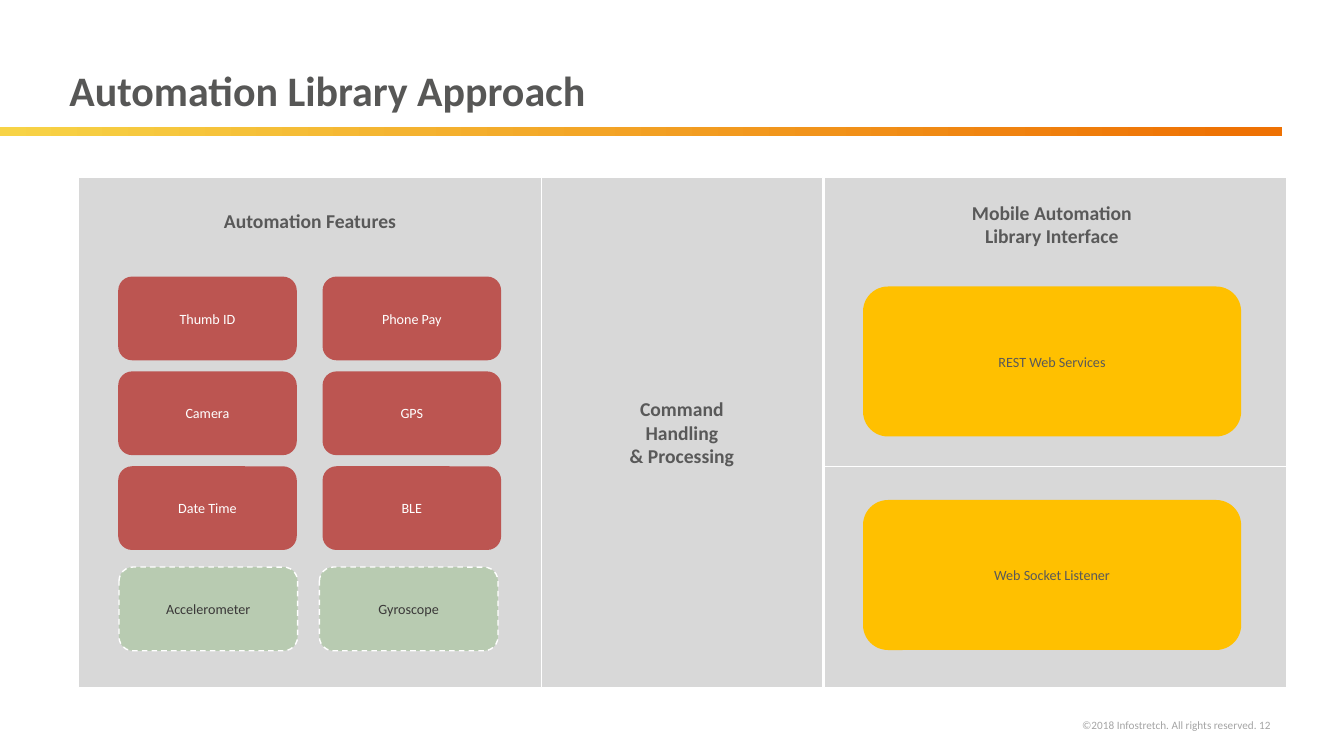
import pptx
import pptx.dml.color
import pptx.enum.dml
import pptx.enum.shapes
import pptx.enum.text
import pptx.oxml
import pptx.util

Cm = pptx.util.Cm
Pt = pptx.util.Pt
RGBColor = pptx.dml.color.RGBColor
Align = pptx.enum.text.PP_ALIGN
Anchor = pptx.enum.text.MSO_ANCHOR
Shape = pptx.enum.shapes.MSO_SHAPE

WHITE = RGBColor(0xFF, 0xFF, 0xFF)
TITLE_GREY = RGBColor(0x57, 0x57, 0x56)
TEXT_GREY = RGBColor(0x59, 0x59, 0x59)
FOOTER_GREY = RGBColor(0xA5, 0xA5, 0xA5)
DARK = RGBColor(0x3A, 0x38, 0x38)
PANEL_GREY = RGBColor(0xD8, 0xD8, 0xD8)
RED = RGBColor(0xBC, 0x55, 0x51)
GREEN = RGBColor(0xB8, 0xCB, 0xB1)
AMBER = RGBColor(0xFF, 0xC0, 0x00)
BAR_START = RGBColor(0xF7, 0xD3, 0x46)
BAR_END = RGBColor(0xEE, 0x71, 0x03)

PANEL_TOP, PANEL_HEIGHT = 4.47, 12.85
FEATURE_TOP, FEATURE_PITCH = 6.97, 2.39
FEATURE_SIZE = (4.5, 2.11)
INTERFACE_SIZE = (9.53, 3.78)


class Painter:
    """Draws elements on one page; lengths are in centimetres."""

    font_name = "Calibri"

    def __init__(self, page):
        self.shapes = page.shapes

    def set_text(self, box, text, size, color, bold=False, align=Align.CENTER,
                 anchor=Anchor.MIDDLE):
        frame = box.text_frame
        frame.word_wrap = True
        frame.vertical_anchor = anchor
        para = frame.paragraphs[0]
        para.text = text
        para.alignment = align
        font = para.font
        font.name, font.size, font.bold = self.font_name, Pt(size), bold
        font.color.rgb = color
        return para

    def label(self, left, top, width, height, text, size, color, bold=True,
              align=Align.CENTER, anchor=Anchor.TOP):
        box = self.shapes.add_textbox(Cm(left), Cm(top), Cm(width), Cm(height))
        return self.set_text(box, text, size, color, bold, align, anchor)

    def block(self, kind, left, top, width, height, fill):
        """Add a flat preset shape without outline."""
        shape = self.shapes.add_shape(kind, Cm(left), Cm(top), Cm(width), Cm(height))
        shape.shadow.inherit = False
        shape.fill.solid()
        shape.fill.fore_color.rgb = fill
        shape.line.fill.background()
        return shape

    def outline(self, shape, width=1):
        shape.line.color.rgb = WHITE
        shape.line.width = Pt(width)

    def panel(self, left, width):
        shape = self.block(Shape.RECTANGLE, left, PANEL_TOP, width, PANEL_HEIGHT, PANEL_GREY)
        self.outline(shape)
        return shape

    def card(self, left, top, size, text, fill, color, dashed=False):
        shape = self.block(Shape.ROUNDED_RECTANGLE, left, top, *size, fill)
        if dashed:
            self.outline(shape)
            shape.line.dash_style = pptx.enum.dml.MSO_LINE.DASH
        self.set_text(shape, text, 10.1, color)

    def gradient_bar(self, left, top, width, height):
        bar = self.block(Shape.RECTANGLE, left, top, width, height, BAR_END)
        bar.fill.gradient()
        bar.fill.gradient_angle = 0
        for stop, position, color in zip(bar.fill.gradient_stops, (0, 0.98),
                                         (BAR_START, BAR_END)):
            stop.position = position
            stop.color.rgb = color

    def divider(self, left, right, height):
        line = self.shapes.add_connector(pptx.enum.shapes.MSO_CONNECTOR.STRAIGHT,
                                         Cm(left), Cm(height), Cm(right), Cm(height))
        self.outline(line, 0.75)
        line._element.spPr.append(pptx.oxml.parse_xml(
            '<a:effectLst xmlns:a="http://schemas.openxmlformats.org/drawingml/2006/main"/>'))


def main():
    deck = pptx.Presentation()
    deck.slide_width, deck.slide_height = Cm(33.87), Cm(19.05)
    painter = Painter(deck.slides.add_slide(deck.slide_layouts[6]))

    painter.label(19.81, 17.98, 12.47, 0.61,
                  "©2018 Infostretch. All rights reserved. 12",
                  8, FOOTER_GREY, bold=False, align=Align.RIGHT)
    painter.gradient_bar(0, 3.19, 32.3, 0.24)
    title = painter.label(1.5, 0.51, 30.81, 2.49, "Automation Library Approach",
                          30, TITLE_GREY, align=Align.LEFT, anchor=Anchor.BOTTOM)
    title.line_spacing = 0.7

    painter.panel(1.98, 11.68)
    painter.label(3, 5.13, 9.63, 1.09, "Automation Features", 14, TEXT_GREY)
    features = [("Thumb ID", "Phone Pay"), ("Camera", "GPS"), ("Date Time", "BLE")]
    for row, names in enumerate(features):
        for left, name in zip((2.98, 8.13), names):
            painter.card(left, FEATURE_TOP + row * FEATURE_PITCH, FEATURE_SIZE,
                         name, RED, WHITE)
    for left, name in ((3, "Accelerometer"), (8.05, "Gyroscope")):
        painter.card(left, 14.29, FEATURE_SIZE, name, GREEN, DARK, dashed=True)

    processing = painter.panel(13.64, 7.09)
    painter.set_text(processing, "Command\nHandling\n& Processing", 14, TEXT_GREY, bold=True)

    painter.panel(20.78, 11.66)
    painter.label(20.68, 4.93, 11.66, 1.83, "Mobile Automation\nLibrary Interface",
                  14, TEXT_GREY)
    painter.divider(20.78, 32.42, 11.76)
    for top, name in ((7.22, "REST Web Services"), (12.6, "Web Socket Listener")):
        painter.card(21.75, top, INTERFACE_SIZE, name, AMBER, TEXT_GREY)

    deck.save("out.pptx")


if __name__ == "__main__":
    main()
